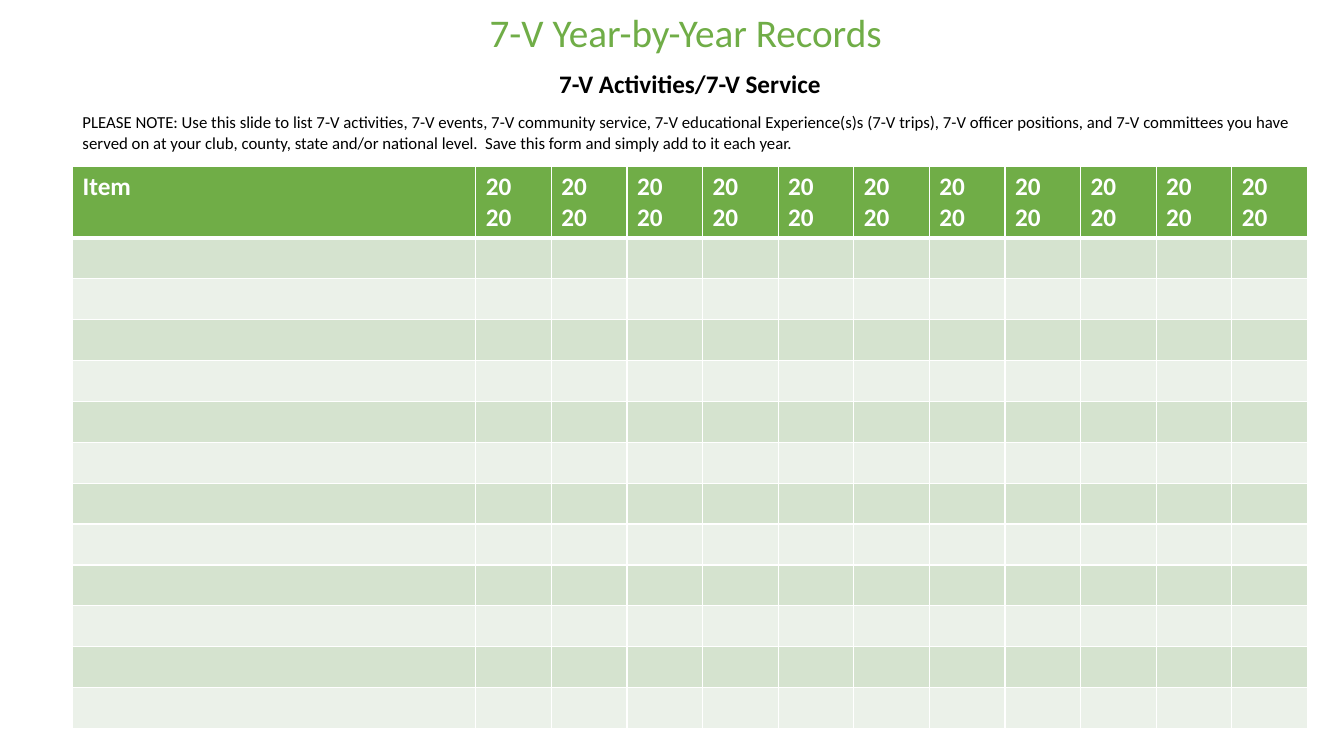
from collections import namedtuple

from lxml import etree
from pptx import Presentation
from pptx.dml.color import RGBColor
from pptx.enum.text import MSO_ANCHOR, MSO_AUTO_SIZE, PP_ALIGN as Align
from pptx.oxml.ns import qn
from pptx.util import Cm, Pt

Box = namedtuple("Box", "left top width height")

FONT = "Calibri"
GREEN, DARK_BAND, LIGHT_BAND = "70AD47", "D5E3CF", "EBF1E9"
WHITE, BLACK = "FFFFFF", "000000"
YEAR_COLUMNS, ENTRY_ROWS = 11, 12
ITEM_WIDTH, HEADER_HEIGHT, ENTRY_HEIGHT = 10.16, 1.8, 1.03

TITLE = "7-V Year-by-Year Records "
SUBTITLE = "7-V Activities/7-V Service"
NOTE = (
    "PLEASE NOTE: Use this slide to list 7-V activities, 7-V events, "
    "7-V community service, 7-V educational Experience(s)s (7-V trips), "
    "7-V officer positions, and 7-V committees you have served on at your club, "
    "county, state and/or national level.  Save this form and simply add to it each year."
)

TITLE_FORMAT = {"size": Pt(28), "bold": False}
SUBTITLE_FORMAT = {"size": Pt(18), "bold": True}
NOTE_FORMAT = {"size": Pt(12), "bold": False}
HEADER_FORMAT = {"size": Pt(18), "bold": True}
HEADING_SPACING = {"line_spacing": 1.07, "space_before": Pt(0), "space_after": Pt(8)}


def color(hex_value):
    return RGBColor.from_string(hex_value)


def apply_format(target, values):
    for name, value in values.items():
        setattr(target, name, value)


def write_paragraph(para, text, font_format, text_color, **layout):
    apply_format(para, layout)
    span = para.add_run()
    span.text = text
    apply_format(span.font, {"name": FONT, **font_format})
    span.font.color.rgb = color(text_color)


def prepare_frame(shape, box):
    """Place a text shape and let its text wrap from the top."""
    for name, value in box._asdict().items():
        setattr(shape, name, Cm(value))
    frame = shape.text_frame
    apply_format(frame, {
        "word_wrap": True,
        "auto_size": MSO_AUTO_SIZE.NONE,
        "vertical_anchor": MSO_ANCHOR.TOP,
    })
    return frame


def add_heading(slide, box):
    title_height = 1.55
    title_box = box._replace(height=title_height)
    notes_box = box._replace(top=box.top + title_height, height=box.height - title_height)

    title = prepare_frame(slide.shapes.title, title_box)
    write_paragraph(title.paragraphs[0], TITLE, TITLE_FORMAT, GREEN,
                    alignment=Align.CENTER, **HEADING_SPACING)

    notes = prepare_frame(slide.shapes.add_textbox(0, 0, 0, 0), notes_box)
    write_paragraph(notes.paragraphs[0], SUBTITLE, SUBTITLE_FORMAT, BLACK,
                    alignment=Align.CENTER, **HEADING_SPACING)
    write_paragraph(notes.add_paragraph(), NOTE, NOTE_FORMAT, BLACK,
                    alignment=Align.LEFT, **HEADING_SPACING)


def set_borders(cell, widths):
    """Draw white borders; widths maps the sides L, R, T and B to points."""
    properties = cell._tc.get_or_add_tcPr()
    for side, width in widths.items():
        line = etree.SubElement(properties, qn(f"a:ln{side}"), w=str(Pt(width)))
        fill = etree.SubElement(line, qn("a:solidFill"))
        etree.SubElement(fill, qn("a:srgbClr"), val=WHITE)


def style_cell(cell, row_index):
    top = 3 if row_index == 1 else 1
    bottom = 3 if row_index == 0 else 1
    set_borders(cell, {"L": 1, "R": 1, "T": top, "B": bottom})
    cell.fill.solid()
    band = DARK_BAND if row_index % 2 else LIGHT_BAND
    cell.fill.fore_color.rgb = color(band if row_index else GREEN)


def add_records_table(slide, box):
    lengths = [Cm(value) for value in box]
    table = slide.shapes.add_table(ENTRY_ROWS + 1, YEAR_COLUMNS + 1, *lengths).table

    year_width = (box.width - ITEM_WIDTH) / YEAR_COLUMNS
    for index, column in enumerate(table.columns):
        column.width = Cm(year_width if index else ITEM_WIDTH)
    for row_index, row in enumerate(table.rows):
        row.height = Cm(ENTRY_HEIGHT if row_index else HEADER_HEIGHT)
        for cell in row.cells:
            style_cell(cell, row_index)

    for index, cell in enumerate(table.rows[0].cells):
        frame = cell.text_frame
        first = frame.paragraphs[0]
        write_paragraph(first, "20" if index else "Item", HEADER_FORMAT, WHITE)
        if index:
            write_paragraph(frame.add_paragraph(), "20", HEADER_FORMAT, WHITE)


def main():
    deck = Presentation()
    deck.slide_width, deck.slide_height = Cm(33.87), Cm(19.05)
    page = deck.slides.add_slide(deck.slide_layouts.get_by_name("Title Only"))
    left, width, table_top = 1.83, 31.12, 4.19
    table_height = HEADER_HEIGHT + ENTRY_ROWS * ENTRY_HEIGHT
    add_records_table(page, Box(left, table_top, width, table_height))
    add_heading(page, Box(left, 0, width, table_top))
    deck.save("out.pptx")


if __name__ == "__main__":
    main()
